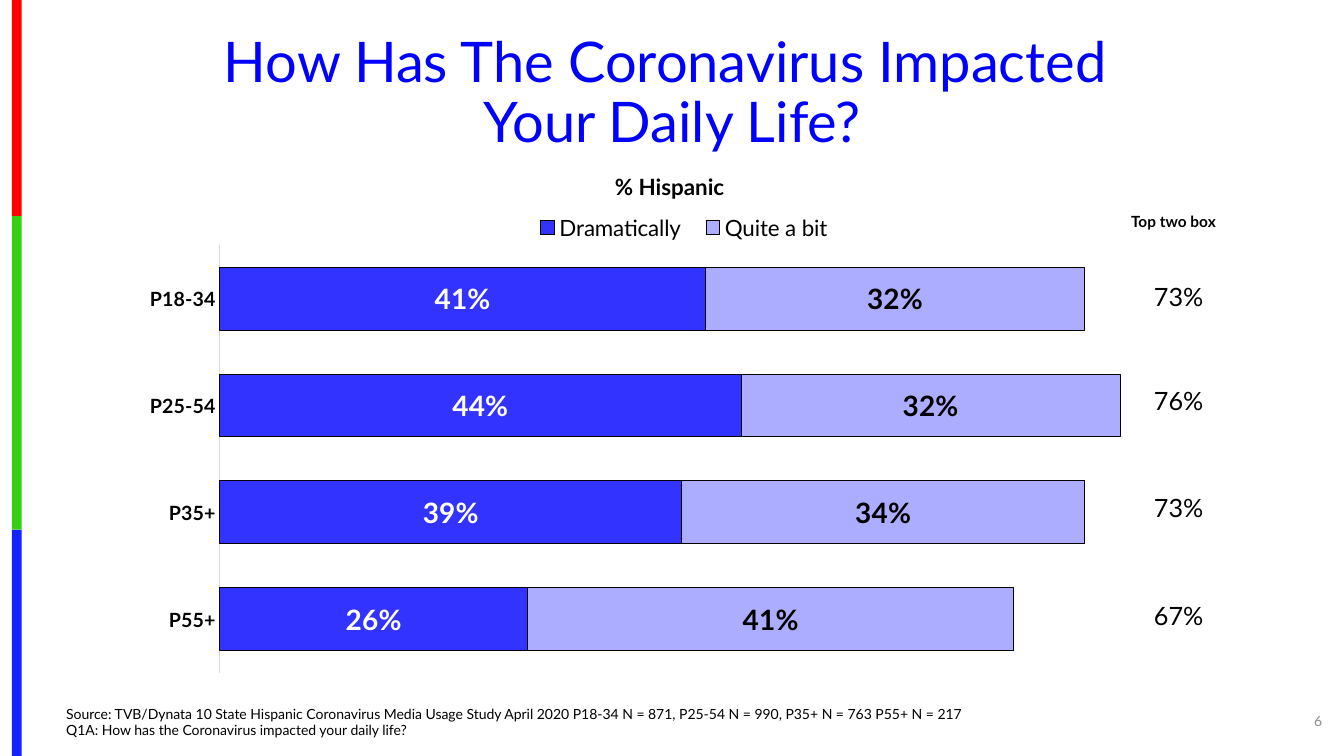
from lxml import etree
from pptx import Presentation
from pptx import util as u
from pptx.chart import data
from pptx.dml.color import RGBColor
from pptx.enum import chart as ch, shapes, text
from pptx.oxml import ns

FACE = "Lato"
HUES = {"red": "FE0000", "green": "36CF12", "blue": "1322FE", "title": "0000FF",
        "dark": "3333FF", "light": "ADADFF", "black": "000000", "white": "FFFFFF",
        "line": "D9D9D9", "gray": "8C8C8C"}
TITLE = "How Has The Coronavirus Impacted \nYour Daily Life?"
SOURCE = ("Source: TVB/Dynata 10 State Hispanic Coronavirus Media Usage Study April 2020 "
          "P18-34 N = 871, P25-54 N = 990, P35+ N = 763 P55+ N = 217 \n"
          "Q1A: How has the Coronavirus impacted your daily life?")
GROUPS = ["P18-34", "P25-54", "P35+", "P55+"]
SERIES = [("Dramatically", [0.41, 0.44, 0.39, 0.26], "dark", "white"),
          ("Quite a bit", [0.32, 0.32, 0.34, 0.41], "light", "black")]
TOTALS = [("73%", 6.96), ("76%", 9.58), ("73%", 12.29), ("67%", 15.01)]
BANDS = [("red", 0, 5.45), ("green", 5.45, 13.35), ("blue", 13.35, 19.05)]


def hue(name):
    return RGBColor.from_string(HUES[name])


def style(font, size, color="black", bold=False):
    font.name = FACE
    font.size = u.Pt(size)
    font.bold = bold
    font.color.rgb = hue(color)


def write(slide, words, left, top, width, height, size, color="black", bold=False,
          align="CENTER", anchor="TOP", space=1.0):
    box = slide.shapes.add_textbox(u.Cm(left), u.Cm(top), u.Cm(width), u.Cm(height))
    frame = box.text_frame
    frame.word_wrap = True
    frame.vertical_anchor = getattr(text.MSO_ANCHOR, anchor)
    frame.text = words
    for para in frame.paragraphs:
        para.alignment = getattr(text.PP_ALIGN, align)
        para.line_spacing = space
        for run in para.runs:
            style(run.font, size, color, bold)


def place(part, *spots, inner=False):
    for old in part.findall(ns.qn("c:layout")):
        part.remove(old)
    layout = etree.Element(ns.qn("c:layout"))
    manual = etree.SubElement(layout, ns.qn("c:manualLayout"))
    pairs = [("layoutTarget", "inner")] if inner else []
    pairs += [("xMode", "edge"), ("yMode", "edge"), *zip("xywh", spots)]
    for tag, val in pairs:
        etree.SubElement(manual, ns.qn("c:" + tag)).set("val", str(val))
    if inner:
        part.insert(0, layout)
    else:
        part.find(ns.qn("c:legendPos")).addnext(layout)


def draw(slide):
    table = data.CategoryChartData(number_format="0%")
    table.categories = GROUPS
    for name, vals, *_ in SERIES:
        table.add_series(name, vals)
    chart = slide.shapes.add_chart(ch.XL_CHART_TYPE.BAR_STACKED, u.Cm(3.35), u.Cm(4.65),
                                   u.Cm(28.07), u.Cm(12.75), table).chart
    style(chart.font, 10)
    chart.has_title = False
    chart.has_legend = True
    key = chart.legend
    key.position = ch.XL_LEGEND_POSITION.TOP
    key.include_in_layout = False
    style(key.font, 16)

    cat = chart.category_axis
    cat.reverse_order = True
    cat.major_tick_mark = ch.XL_TICK_MARK.NONE
    cat.format.line.color.rgb = hue("line")
    cat.format.line.width = u.Pt(0.75)
    style(cat.tick_labels.font, 14, bold=True)
    val = chart.value_axis
    val.minimum_scale, val.maximum_scale = 0, 0.8
    val.has_major_gridlines = False
    val.visible = False

    plot = chart.plots[0]
    plot.gap_width, plot.overlap = 70, 100
    plot.vary_by_categories = False
    for ser, (_, _, fill, ink) in zip(plot.series, SERIES):
        ser.format.fill.solid()
        ser.format.fill.fore_color.rgb = hue(fill)
        ser.format.line.color.rgb = hue("black")
        ser.format.line.width = u.Pt(0.75)
        tags = ser.data_labels
        tags.show_value = True
        tags.number_format = "0%"
        tags.number_format_is_linked = False
        style(tags.font, 20, ink, True)

    area = chart.element.find(".//" + ns.qn("c:plotArea"))
    place(area, 0.08, 0.12, 0.85, 0.85, inner=True)
    for tag, spot in zip("xywh", (0.078, 0.12, 0.851, 0.845)):
        area.find(".//" + ns.qn("c:" + tag)).set("val", str(spot))
    place(chart.element.find(".//" + ns.qn("c:legend")), 0.35, 0.05, 0.29, 0.07)


def main():
    deck = Presentation()
    deck.slide_width, deck.slide_height = u.Cm(33.87), u.Cm(19.05)
    slide = deck.slides.add_slide(deck.slide_layouts[6])
    for color, top, end in BANDS:
        band = slide.shapes.add_shape(shapes.MSO_SHAPE.RECTANGLE, u.Cm(0.3), u.Cm(top),
                                      u.Cm(0.25), u.Cm(end - top))
        band.shadow.inherit = False
        band.fill.solid()
        band.fill.fore_color.rgb = hue(color)
        band.line.fill.background()
    write(slide, TITLE, 1.07, 0.71, 31.75, 3.33, 40, "title", anchor="MIDDLE", space=0.9)
    write(slide, SOURCE, 1.42, 16.89, 27.25, 1.85, 10, align="LEFT", anchor="BOTTOM")
    draw(slide)
    for total, top in TOTALS:
        write(slide, total, 28.18, top, 3.05, 1.02, 18)
    write(slide, "Top two box", 27.38, 5.21, 4.39, 0.56, 11, bold=True)
    write(slide, "6", 32.05, 17.65, 1.52, 1.02, 10, "gray", align="RIGHT", anchor="MIDDLE")
    write(slide, "% Hispanic", 12.34, 4.24, 9.07, 0.94, 16, bold=True)
    deck.save("out.pptx")


if __name__ == "__main__":
    main()
